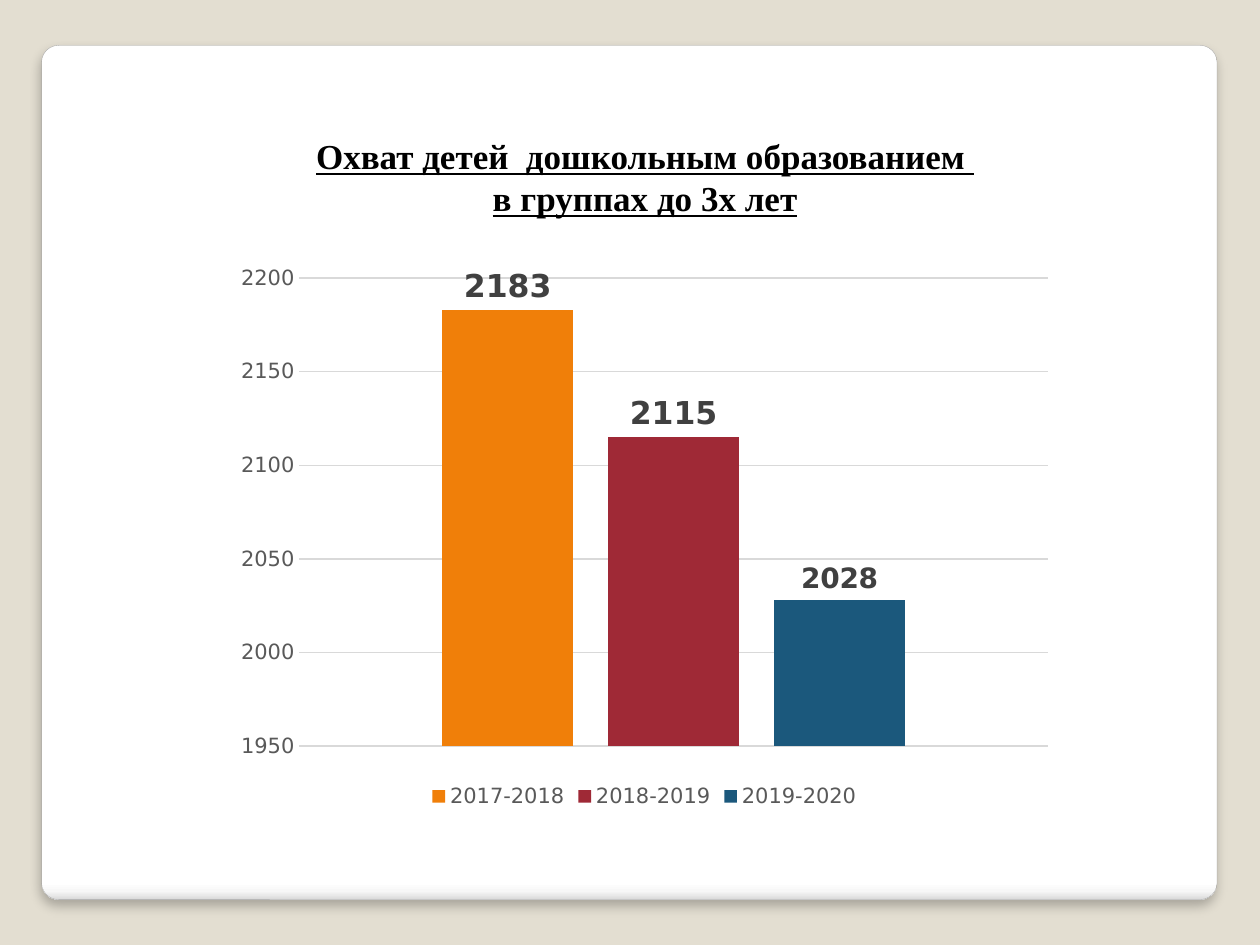
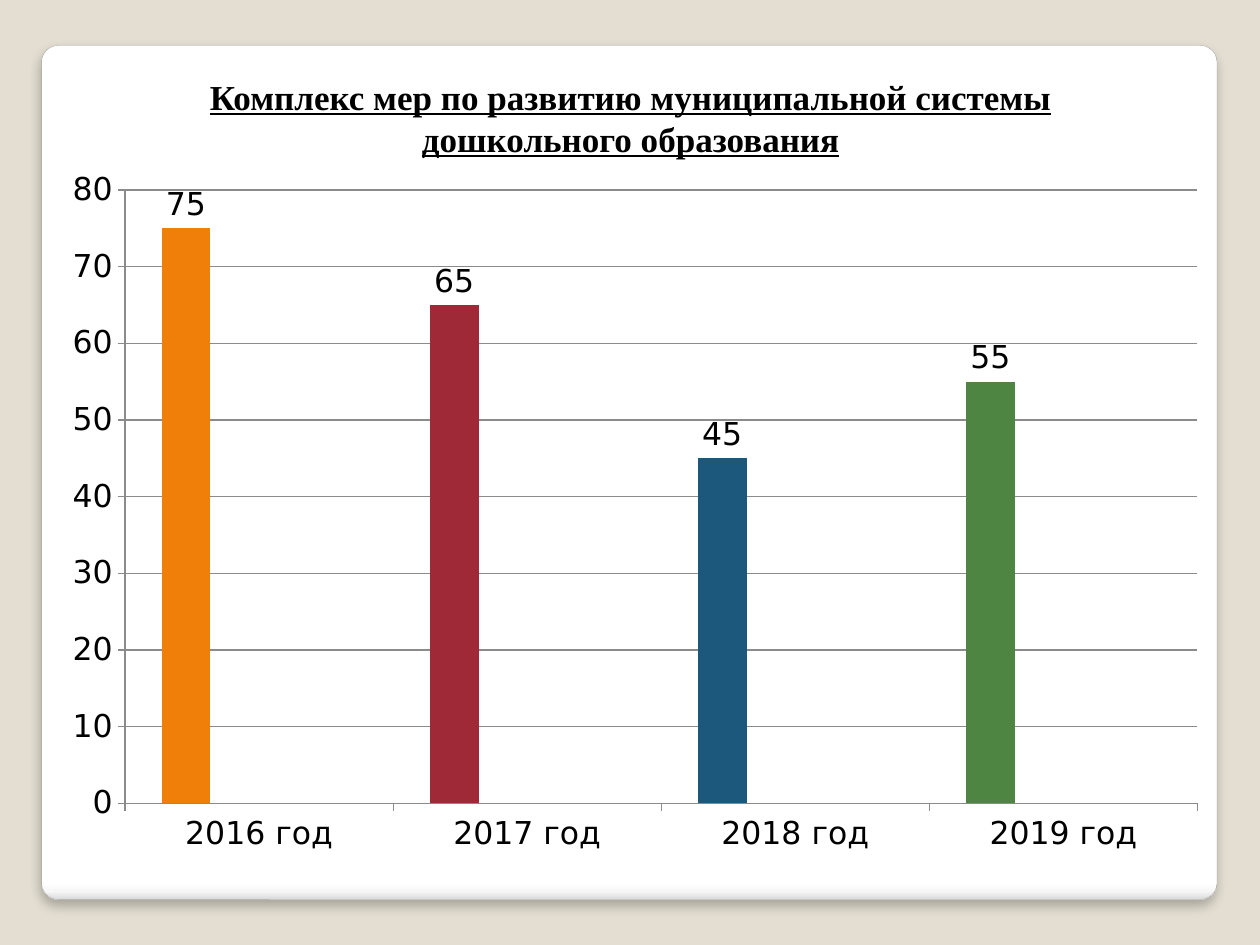
"""Build two slides with charts on preschool education coverage."""
import dataclasses
from typing import Optional

import lxml.etree
import pptx
import pptx.chart.chart
import pptx.chart.data
import pptx.chart.series
import pptx.dml.color
import pptx.dml.line
import pptx.enum.chart
import pptx.enum.shapes
import pptx.enum.text
import pptx.oxml.ns
import pptx.presentation
import pptx.slide
import pptx.util

RGB = pptx.dml.color.RGBColor
EMU_PER_PX = 9144
SAND = RGB(0xE3, 0xDE, 0xD1)
CARD_EDGE = RGB(0xA4, 0xA4, 0xA4)
BLACK = RGB(0, 0, 0)
ORANGE = RGB(0xF0, 0x7F, 0x09)
CRIMSON = RGB(0x9F, 0x29, 0x36)
NAVY = RGB(0x1B, 0x58, 0x7C)
GREEN = RGB(0x4E, 0x85, 0x42)
LABEL_GREY = RGB(0x40, 0x40, 0x40)
AXIS_GREY = RGB(0x59, 0x59, 0x59)
PALE_GRID = RGB(0xD9, 0xD9, 0xD9)
DARK_GRID = RGB(0x8B, 0x8B, 0x8B)
CARD_GRADIENT = ((0, "FFFFFF"), (98, "FFFFFF"), (99, "F7F7F7"), (100, "DADADA"))
TITLE_FONT = "Times New Roman"
CHART_FONT = "DejaVu Sans"


@dataclasses.dataclass(frozen=True)
class Box:
    """Place and size in px."""
    left: int
    top: int
    width: int
    height: int

    def emu(self) -> tuple[int, ...]:
        """Return the four lengths in EMU."""
        return tuple(side * EMU_PER_PX for side in dataclasses.astuple(self))


@dataclasses.dataclass(frozen=True)
class Bars:
    """One series of columns."""
    name: str
    values: tuple[Optional[int], ...]
    colors: tuple[RGB, ...]
    label_size: int = 18


@dataclasses.dataclass(frozen=True)
class ChartSlide:
    """Title, data and chart style of one slide."""
    title: str
    title_box: Box
    chart_box: Box
    categories: tuple[str, ...]
    bars: tuple[Bars, ...]
    scale: tuple[int, int, int]
    axis_size: int
    axis_color: RGB
    label_color: RGB
    grid_color: RGB
    gap: int
    overlap: int
    bold_labels: bool
    compact: bool


CARD = Box(33, 36, 933, 678)
YEAR_COLORS = (ORANGE, CRIMSON, NAVY, GREEN)
NO_VALUES = (None,) * 4

COVERAGE = ChartSlide(
    title="Охват детей  дошкольным образованием \nв группах до 3х лет",
    title_box=Box(141, 102, 742, 77), chart_box=Box(178, 202, 667, 444),
    categories=("1",),
    bars=(Bars("2017-2018", (2183,), (ORANGE,)),
          Bars("2018-2019", (2115,), (CRIMSON,)),
          Bars("2019-2020", (2028,), (NAVY,), label_size=16)),
    scale=(1950, 2200, 50), axis_size=12, axis_color=AXIS_GREY,
    label_color=LABEL_GREY, grid_color=PALE_GRID,
    gap=219, overlap=-27, bold_labels=True, compact=True)

MEASURES = ChartSlide(
    title="Комплекс мер по развитию муниципальной системы дошкольного образования",
    title_box=Box(94, 55, 813, 77), chart_box=Box(39, 125, 930, 563),
    categories=tuple(f"{year} год" for year in range(2016, 2020)),
    bars=(Bars("Series 1", (75, 65, 45, 55), YEAR_COLORS),
          *(Bars(f"Series {number}", NO_VALUES, (color,))
            for number, color in enumerate(YEAR_COLORS[1:], 2))),
    scale=(0, 80, 10), axis_size=18, axis_color=BLACK,
    label_color=BLACK, grid_color=DARK_GRID,
    gap=150, overlap=0, bold_labels=False, compact=False)


def style_font(font, *, size: int, color: RGB, name: str = CHART_FONT,
               bold: bool = False, underline: bool = False) -> None:
    """Set the whole look of a font."""
    font.name, font.size = name, pptx.util.Pt(size)
    font.bold, font.underline = bold, underline
    font.color.rgb = color


def style_line(line: pptx.dml.line.LineFormat, color: RGB, width: float = 0.75) -> None:
    """Set the colour and width of a line."""
    line.color.rgb, line.width = color, pptx.util.Pt(width)


def add_text(slide: pptx.slide.Slide, text: str, box: Box, *, size: int, color: RGB,
             name: str, bold: bool, underline: bool) -> None:
    """Add centred text, one paragraph for each line."""
    frame = slide.shapes.add_textbox(*box.emu()).text_frame
    frame.word_wrap = True
    frame.text = text
    for paragraph in frame.paragraphs:
        paragraph.alignment = pptx.enum.text.PP_ALIGN.CENTER
        for run in paragraph.runs:
            style_font(run.font, size=size, color=color, name=name,
                       bold=bold, underline=underline)


def add_xml(parent, tag: str, **attributes: object):
    """Append a child element with its attributes."""
    return lxml.etree.SubElement(parent, pptx.oxml.ns.qn(tag),
                                 {key: str(value) for key, value in attributes.items()})


def add_card(slide: pptx.slide.Slide) -> None:
    """Draw the background and the rounded white card."""
    slide.background.fill.solid()
    slide.background.fill.fore_color.rgb = SAND
    card = slide.shapes.add_shape(pptx.enum.shapes.MSO_SHAPE.ROUNDED_RECTANGLE, *CARD.emu())
    card.adjustments[0] = 0.02
    card.fill.gradient()
    card.fill.gradient_angle = 270
    style_line(card.line, CARD_EDGE, 0.16)
    card.shadow.inherit = False
    properties = card._element.spPr
    stops = properties.find(".//" + pptx.oxml.ns.qn("a:gsLst"))
    for stop in list(stops):
        stops.remove(stop)
    for percent, color in CARD_GRADIENT:
        add_xml(add_xml(stops, "a:gs", pos=percent * 1000), "a:srgbClr", val=color)
    shadow = add_xml(properties.find(pptx.oxml.ns.qn("a:effectLst")), "a:outerShdw",
                     blurRad=pptx.util.Pt(6), dist=pptx.util.Pt(4),
                     dir=90 * 60000, algn="t", rotWithShape=0)
    add_xml(add_xml(shadow, "a:srgbClr", val="000000"), "a:alpha", val=25000)


def style_bars(series: pptx.chart.series.BarSeries, bars: Bars, content: ChartSlide) -> None:
    """Colour the columns and show their values."""
    series.invert_if_negative = False
    series.format.fill.solid()
    series.format.fill.fore_color.rgb = bars.colors[0]
    for index, color in enumerate(bars.colors[1:], 1):
        fill = series.points[index].format.fill
        fill.solid()
        fill.fore_color.rgb = color
    labels = series.data_labels
    labels.show_value = True
    labels.position = pptx.enum.chart.XL_LABEL_POSITION.OUTSIDE_END
    style_font(labels.font, size=bars.label_size, color=content.label_color,
               bold=content.bold_labels)


def style_axes(chart: pptx.chart.chart.Chart, content: ChartSlide) -> None:
    """Set the scale, gridlines, ticks and legend."""
    ticks = pptx.enum.chart.XL_TICK_MARK
    values, categories = chart.value_axis, chart.category_axis
    values.minimum_scale, values.maximum_scale, values.major_unit = content.scale
    values.has_major_gridlines = True
    style_line(values.major_gridlines.format.line, content.grid_color)
    for axis in (values, categories):
        axis.major_tick_mark = ticks.NONE if content.compact else ticks.OUTSIDE
        axis.minor_tick_mark = ticks.NONE
        style_font(axis.tick_labels.font, size=content.axis_size, color=content.axis_color)
        style_line(axis.format.line, content.grid_color)
    categories.visible = not content.compact
    chart.has_legend = content.compact
    if content.compact:
        values.format.line.fill.background()
        chart.legend.position = pptx.enum.chart.XL_LEGEND_POSITION.BOTTOM
        chart.legend.include_in_layout = False
        style_font(chart.legend.font, size=content.axis_size, color=content.axis_color)


def add_columns(slide: pptx.slide.Slide, content: ChartSlide) -> None:
    """Add the column chart."""
    data = pptx.chart.data.CategoryChartData()
    data.categories = content.categories
    for bars in content.bars:
        data.add_series(bars.name, bars.values)
    chart = slide.shapes.add_chart(pptx.enum.chart.XL_CHART_TYPE.COLUMN_CLUSTERED,
                                   *content.chart_box.emu(), data).chart
    chart.has_title = False
    style_font(chart.font, size=content.axis_size, color=BLACK)
    plot = chart.plots[0]
    plot.vary_by_categories = False
    plot.gap_width, plot.overlap = content.gap, content.overlap
    for series, bars in zip(plot.series, content.bars):
        style_bars(series, bars, content)
    style_axes(chart, content)


def add_chart_slide(deck: pptx.presentation.Presentation, content: ChartSlide) -> None:
    """Add one slide with card, title and chart."""
    slide = deck.slides.add_slide(deck.slide_layouts[6])
    add_card(slide)
    add_text(slide, content.title, content.title_box, size=20, color=BLACK,
             name=TITLE_FONT, bold=True, underline=True)
    add_columns(slide, content)


def main() -> None:
    """Build and save the deck."""
    deck = pptx.Presentation()
    deck.slide_width, deck.slide_height = 1000 * EMU_PER_PX, 750 * EMU_PER_PX
    for content in (COVERAGE, MEASURES):
        add_chart_slide(deck, content)
    deck.save("out.pptx")


if __name__ == "__main__":
    main()
